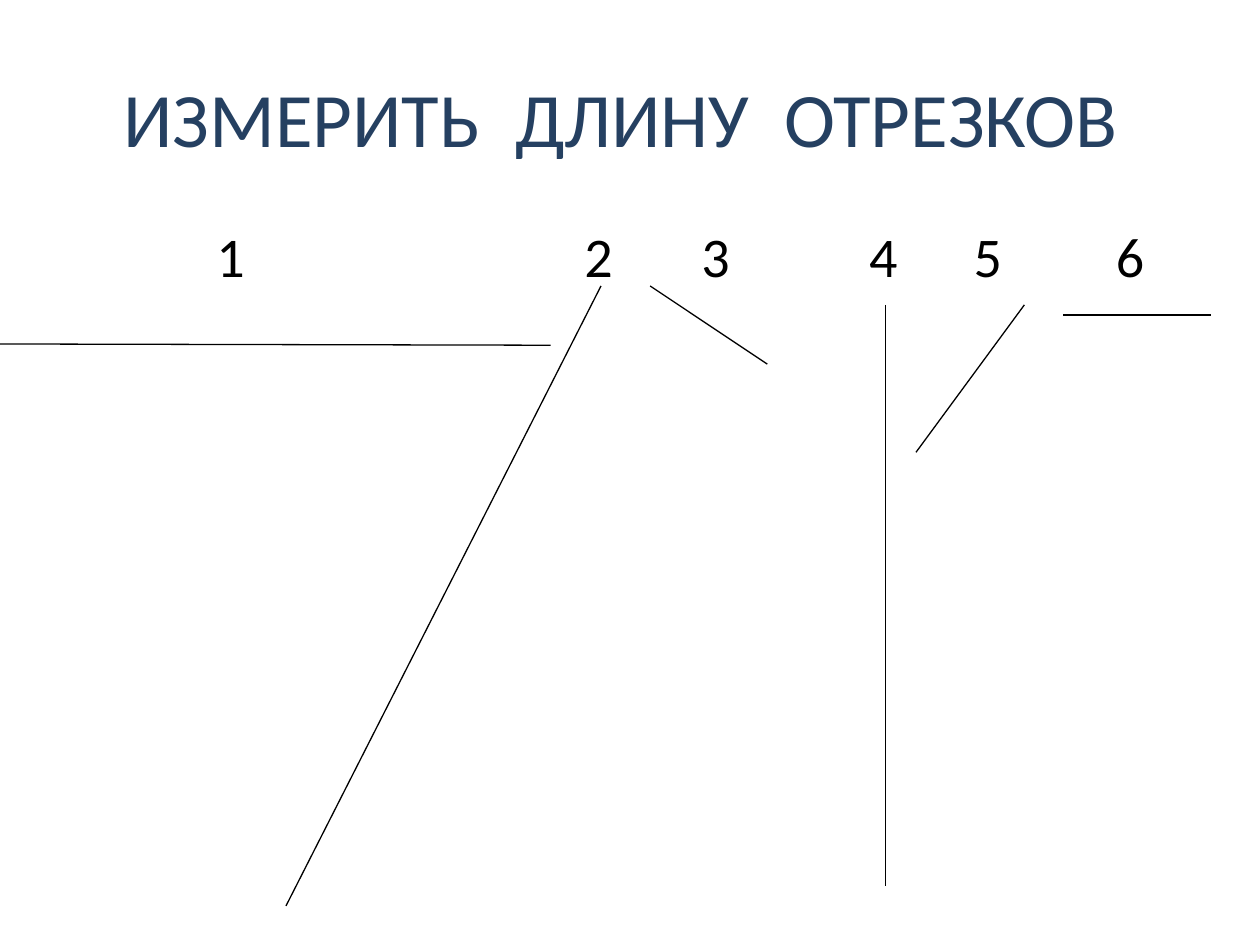
from lxml import etree
from pptx import Presentation
from pptx.dml.color import RGBColor
from pptx.enum import shapes, text
from pptx.oxml import ns
from pptx.util import Inches, Pt

NAVY = RGBColor(0x25, 0x40, 0x61)
BLACK = RGBColor(0, 0, 0)
FONT = "Calibri"
LABEL_TOP, LABEL_W, LABEL_H = 1.71, 0.6, 0.6

# Content: number, centre of its label, start and end of the segment
TITLE = "ИЗМЕРИТЬ  ДЛИНУ  ОТРЕЗКОВ "
SEGMENTS = [
    ("1", 1.83, (0, 2.73), (4.37, 2.74)),
    ("2", 4.75, (4.77, 2.27), (2.27, 7.19)),
    ("3", 5.68, (5.16, 2.27), (6.09, 2.89)),
    ("4", 7.01, (7.03, 2.42), (7.03, 7.03)),
    ("5", 7.84, (8.13, 2.42), (7.27, 3.59)),
    ("6", 8.97, (8.44, 2.5), (9.61, 2.5)),
]


def write(sp, content, box, size=32, color=BLACK, anchor=text.MSO_ANCHOR.TOP):
    """Place a shape and fill it with one centred paragraph."""
    sp.left, sp.top, sp.width, sp.height = map(Inches, box)
    tf = sp.text_frame
    tf.word_wrap = True
    tf.vertical_anchor = anchor
    p = tf.paragraphs[0]
    p.alignment = text.PP_ALIGN.CENTER
    r = p.add_run()
    r.text = content
    r.font.name, r.font.size = FONT, Pt(size)
    r.font.color.rgb = color


def add_segment(s, start, end):
    line = s.shapes.add_connector(
        shapes.MSO_CONNECTOR.STRAIGHT, *map(Inches, start + end))
    line.line.color.rgb = BLACK
    line.line.width = Pt(0.75)
    etree.SubElement(line._element.spPr, ns.qn("a:effectLst"))


prs = Presentation()
prs.slide_width, prs.slide_height = Inches(10), Inches(7.5)
s = prs.slides.add_slide(prs.slide_layouts[5])

# Title
write(s.shapes.title, TITLE, (0.5, 0.3, 9, 1.25), size=44, color=NAVY,
      anchor=text.MSO_ANCHOR.MIDDLE)

# Numbered segments to measure
for number, center, start, end in SEGMENTS:
    box = (center - LABEL_W / 2, LABEL_TOP, LABEL_W, LABEL_H)
    write(s.shapes.add_textbox(0, 0, 0, 0), number, box)
    add_segment(s, start, end)

prs.save("out.pptx")
